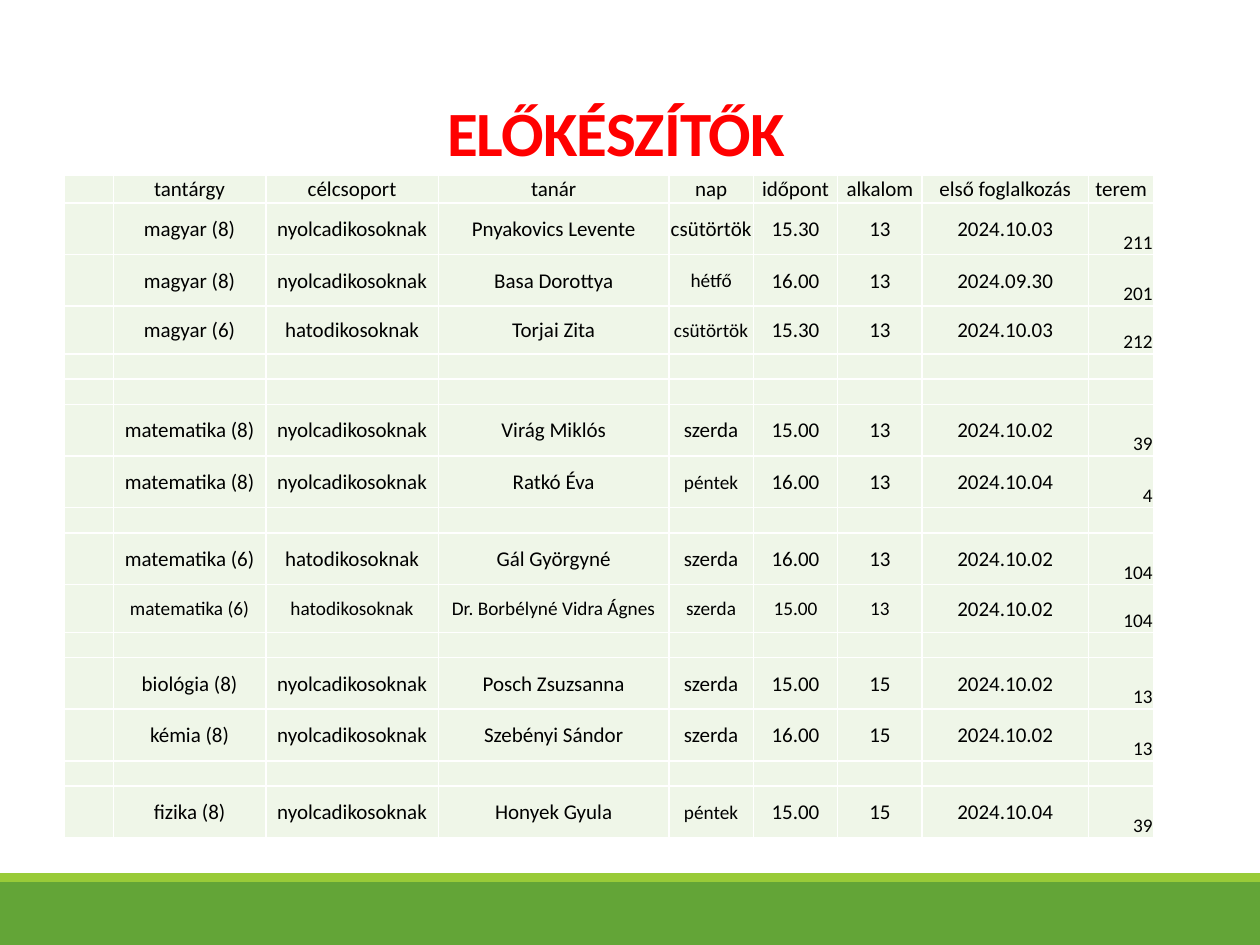
import pptx
import pptx.util
import pptx.dml.color
import pptx.enum.shapes
import pptx.enum.text
import lxml.etree
from pptx.oxml.ns import qn

Inches, Pt = pptx.util.Inches, pptx.util.Pt
RGB = pptx.dml.color.RGBColor
ALIGN = pptx.enum.text.PP_ALIGN
ANCHOR = pptx.enum.text.MSO_ANCHOR

GREEN = RGB(0x63, 0xA5, 0x37)
LIME = RGB(0x99, 0xCB, 0x38)
PALE = RGB(0xEF, 0xF6, 0xE8)
RED = RGB(0xFF, 0, 0)
BLACK = RGB(0, 0, 0)
WHITE = RGB(0xFF, 0xFF, 0xFF)
FONT = "Calibri"

TITLE = "ELŐKÉSZÍTŐK"
BANDS = [(7, 0.5, GREEN), (6.93, 0.07, LIME)]
COLS = [0.39, 1.21, 1.37, 1.83, 0.67, 0.67, 0.67, 1.32, 0.52]
HEAD = ("tantárgy", "célcsoport", "tanár", "nap", "időpont", "alkalom",
        "első foglalkozás", "terem")
EIGHT, SIX = "nyolcadikosoknak", "hatodikosoknak"
GAP = (0.2, ("",) * 8, ())
DAY = (4,)
ROWS = [
    (0.22, HEAD, ()),
    (0.41, ("magyar (8)", EIGHT, "Pnyakovics Levente", "csütörtök", "15.30", "13", "2024.10.03", "211"), ()),
    (0.41, ("magyar (8)", EIGHT, "Basa Dorottya", "hétfő", "16.00", "13", "2024.09.30", "201"), DAY),
    (0.38, ("magyar (6)", SIX, "Torjai Zita", "csütörtök", "15.30", "13", "2024.10.03", "212"), DAY),
    GAP,
    GAP,
    (0.41, ("matematika (8)", EIGHT, "Virág Miklós", "szerda", "15.00", "13", "2024.10.02", "39"), ()),
    (0.41, ("matematika (8)", EIGHT, "Ratkó Éva", "péntek", "16.00", "13", "2024.10.04", "4"), DAY),
    GAP,
    (0.41, ("matematika (6)", SIX, "Gál Györgyné", "szerda", "16.00", "13", "2024.10.02", "104"), ()),
    (0.38, ("matematika (6)", SIX, "Dr. Borbélyné Vidra Ágnes", "szerda", "15.00", "13", "2024.10.02", "104"),
     range(1, 7)),
    GAP,
    (0.41, ("biológia (8)", EIGHT, "Posch Zsuzsanna", "szerda", "15.00", "15", "2024.10.02", "13"), ()),
    (0.41, ("kémia (8)", EIGHT, "Szebényi Sándor", "szerda", "16.00", "15", "2024.10.02", "13"), ()),
    GAP,
    (0.41, ("fizika (8)", EIGHT, "Honyek Gyula", "péntek", "15.00", "15", "2024.10.04", "39"), DAY),
]


def style(para, size, color, align):
    para.alignment = align
    para.font.name = FONT
    para.font.size = Pt(size)
    para.font.color.rgb = color


def border(cell):
    props = cell._tc.get_or_add_tcPr()
    for side in ("a:lnL", "a:lnR", "a:lnT", "a:lnB"):
        line = lxml.etree.SubElement(props, qn(side), w=str(Pt(1)))
        fill = lxml.etree.SubElement(line, qn("a:solidFill"))
        lxml.etree.SubElement(fill, qn("a:srgbClr"), val=str(WHITE))


def write(cell, text, size, room):
    border(cell)
    cell.fill.solid()
    cell.fill.fore_color.rgb = PALE
    cell.margin_left = cell.margin_right = cell.margin_top = Inches(0.01)
    cell.margin_bottom = 0
    cell.vertical_anchor = ANCHOR.BOTTOM if room else ANCHOR.MIDDLE
    para = cell.text_frame.paragraphs[0]
    style(para, size, BLACK, ALIGN.RIGHT if room else ALIGN.CENTER)
    if text:
        para.text = text
    else:
        lxml.etree.SubElement(para._p, qn("a:endParaRPr"), sz=str(size * 100))


def main():
    deck = pptx.Presentation()
    deck.slide_width, deck.slide_height = Inches(10), Inches(7.5)
    slide = deck.slides.add_slide(deck.slide_layouts[6])
    shapes = slide.shapes

    for top, high, color in BANDS:
        band = shapes.add_shape(pptx.enum.shapes.MSO_SHAPE.RECTANGLE,
                                0, Inches(top), Inches(10), Inches(high))
        band.shadow.inherit = False
        band.fill.solid()
        band.fill.fore_color.rgb = color
        band.line.fill.background()

    frame = shapes.add_textbox(Inches(1.29), Inches(1), Inches(7.44), Inches(0.39)).text_frame
    frame.word_wrap = True
    frame.vertical_anchor = ANCHOR.BOTTOM
    frame.margin_right = Inches(0.34)
    para = frame.paragraphs[0]
    para.text = TITLE
    style(para, 36, RED, ALIGN.CENTER)
    para.font.bold = True
    para.line_spacing = 0.85
    para.runs[0]._r.get_or_add_rPr().set("spc", "-50")

    highs = [row[0] for row in ROWS]
    grid = shapes.add_table(len(ROWS), len(COLS), Inches(0.51), Inches(1.39),
                            Inches(sum(COLS)), Inches(sum(highs))).table
    grid.first_row = grid.horz_banding = False
    for col, wide in zip(grid.columns, COLS):
        col.width = Inches(wide)
    for r, (high, texts, small) in enumerate(ROWS):
        grid.rows[r].height = Inches(high)
        for c, text in enumerate(("",) + texts):
            room = c == len(COLS) - 1 and r > 0
            size = 11 if room or c in small or not text else 12
            write(grid.cell(r, c), text, size, room)

    deck.save("out.pptx")


if __name__ == "__main__":
    main()
